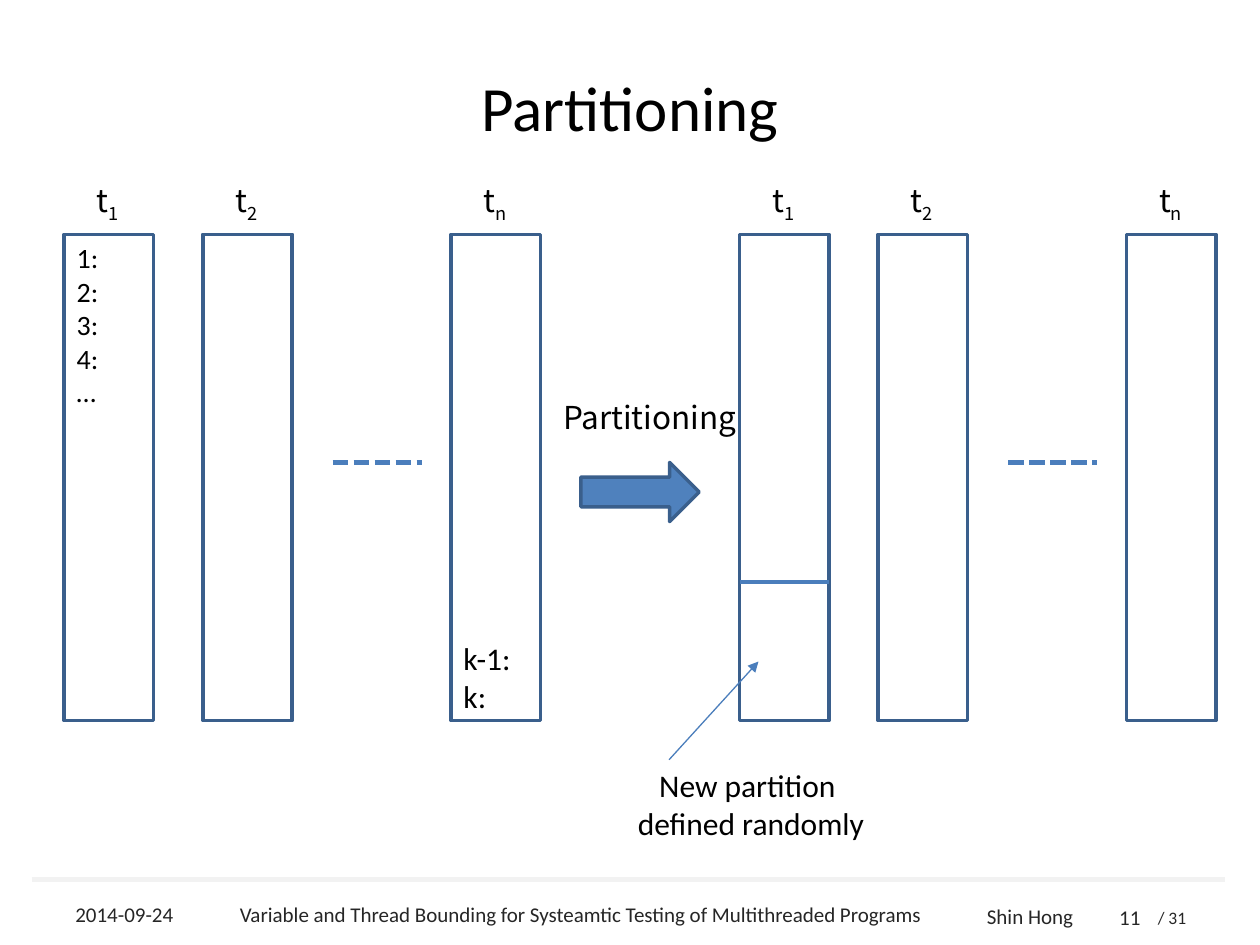
from lxml import etree
from pptx import Presentation
from pptx.dml.color import RGBColor
from pptx.enum.dml import MSO_LINE
from pptx.enum.shapes import MSO_CONNECTOR, MSO_SHAPE
from pptx.enum.text import MSO_ANCHOR, PP_ALIGN
from pptx.oxml.ns import qn
from pptx.util import Inches, Pt

STRAIGHT = MSO_CONNECTOR.STRAIGHT
RECTANGLE, RIGHT_ARROW = MSO_SHAPE.RECTANGLE, MSO_SHAPE.RIGHT_ARROW
DASH = MSO_LINE.SQUARE_DOT
TOP, MIDDLE, BOTTOM = MSO_ANCHOR.TOP, MSO_ANCHOR.MIDDLE, MSO_ANCHOR.BOTTOM
LEFT, CENTER, RIGHT = PP_ALIGN.LEFT, PP_ALIGN.CENTER, PP_ALIGN.RIGHT

BODY_FONT, LABEL_FONT = "Calibri", "Noto Sans CJK KR"
BLACK, GRAY, PALE = "000000", "262626", "F2F2F2"
OUTLINE, FILL, STROKE = "3A5F8C", "4F81BD", "4B7EBC"

COLUMN_TOP, COLUMN_WIDTH, COLUMN_HEIGHT = 1.86, 0.71, 3.86
THREAD_OFFSETS = {"1": 0, "2": 1.1, "n": 3.07}
DASH_OFFSET, DASH_Y = 2.13, 3.67


def color(value):
    return RGBColor.from_string(value)


def format_run(span, size, font=BODY_FONT, fill=BLACK):
    for name, value in {"size": Pt(size), "name": font}.items():
        setattr(span.font, name, value)
    span.font.color.rgb = color(fill)


def write(shape, lines, size, font=BODY_FONT, fill=BLACK, align=LEFT,
          anchor=TOP, wrap=True):
    frame = shape.text_frame
    for name, value in {"word_wrap": wrap, "vertical_anchor": anchor}.items():
        setattr(frame, name, value)
    for index, line in enumerate(lines):
        para = frame.add_paragraph() if index else frame.paragraphs[0]
        para.text = line
        para.alignment = align
        for span in para.runs:
            format_run(span, size, font, fill)
    return frame


def add_text(page, box, lines, size, **style):
    shape = page.shapes.add_textbox(*map(Inches, box))
    return write(shape, lines, size, **style)


def add_block(page, kind, box, fill=None):
    shape = page.shapes.add_shape(kind, *map(Inches, box))
    shape.shadow.inherit = False
    if fill:
        shape.fill.solid()
        shape.fill.fore_color.rgb = color(fill)
    else:
        shape.fill.background()
    shape.line.color.rgb = color(OUTLINE)
    shape.line.width = Pt(2)
    return shape


def add_line(page, start, end, width, stroke=STROKE, dash=None, arrow=False):
    line = page.shapes.add_connector(STRAIGHT, *map(Inches, start + end))
    line.line.color.rgb = color(stroke)
    line.line.width = Pt(width)
    if dash:
        line.line.dash_style = dash
    if arrow:
        etree.SubElement(line.line._get_or_add_ln(), qn("a:tailEnd"), type="triangle")
    etree.SubElement(line._element.spPr, qn("a:effectLst"))


def add_title(page, box, text):
    title = page.shapes.title
    for name, value in zip(("left", "top", "width", "height"), box):
        setattr(title, name, Inches(value))
    write(title, [text], 36, align=CENTER, anchor=MIDDLE)


def add_threads(page, left):
    """Draw one group of labelled columns and return them by subscript."""
    columns = {}
    for subscript, offset in THREAD_OFFSETS.items():
        x = left + offset
        columns[subscript] = add_block(
            page, RECTANGLE, (x, COLUMN_TOP, COLUMN_WIDTH, COLUMN_HEIGHT))
        label = add_text(page, (x + 0.16, 1.39, 0.38, 0.4), ["t"], 18,
                         font=LABEL_FONT, wrap=False)
        span = label.paragraphs[0].add_run()
        span.text = subscript
        format_run(span, 18, LABEL_FONT)
        span.font._element.set("baseline", "-25000")
    # Dashes for the threads left out
    x = left + DASH_OFFSET
    add_line(page, (x, DASH_Y), (x + COLUMN_WIDTH, DASH_Y), 3, dash=DASH)
    return columns


def add_before(page, left):
    columns = add_threads(page, left)
    write(columns["1"], ["1:", "2:", "3:", "4:", "…"], 16)
    write(columns["n"], ["k-1:", "k:"], 18, anchor=BOTTOM)


def add_after(page, left):
    add_threads(page, left)
    # Partition boundary and its callout
    add_line(page, (left, 4.62), (left + COLUMN_WIDTH, 4.62), 2.25)
    add_line(page, (5.31, 6.03), (6.02, 5.25), 0.75, arrow=True)
    add_text(page, (4.95, 6.03, 2.02, 0.71), ["New partition \vdefined randomly"],
             18, align=CENTER, wrap=False)


def add_step(page, left, top):
    add_block(page, RIGHT_ARROW, (left, top, 0.94, 0.47), FILL)
    add_text(page, (left - 0.24, top - 0.56, 1.61, 0.4), ["Partitioning"], 18,
             font=LABEL_FONT, wrap=False)


def add_footer(page):
    add_line(page, (0.25, 6.98), (9.72, 6.98), 3, stroke=PALE)
    parts = [
        ("2014-09-24", (0.5, 7.09, 1.04, 0.33), 12, LEFT, MIDDLE),
        ("Variable and Thread Bounding for Systeamtic Testing of Multithreaded Programs",
         (1.54, 7.09, 6.14, 0.33), 12, CENTER, MIDDLE),
        ("Shin Hong", (7.73, 7.12, 0.89, 0.25), 12, CENTER, TOP),
        ("11", (8.68, 7.15, 0.47, 0.26), 12, RIGHT, MIDDLE),
        ("/ 31", (9.09, 7.15, 0.55, 0.27), 10, LEFT, MIDDLE),
    ]
    for text, box, size, align, anchor in parts:
        add_text(page, box, [text], size, fill=GRAY, align=align, anchor=anchor)


def main():
    deck = Presentation()
    deck.slide_width, deck.slide_height = Inches(10), Inches(7.5)
    page = deck.slides.add_slide(deck.slide_layouts[5])
    add_title(page, (0.5, 0.3, 9, 1.09), "Partitioning")
    add_before(page, 0.51)
    add_after(page, 5.87)
    add_step(page, 4.61, 3.67)
    add_footer(page)
    deck.save("out.pptx")


if __name__ == "__main__":
    main()
